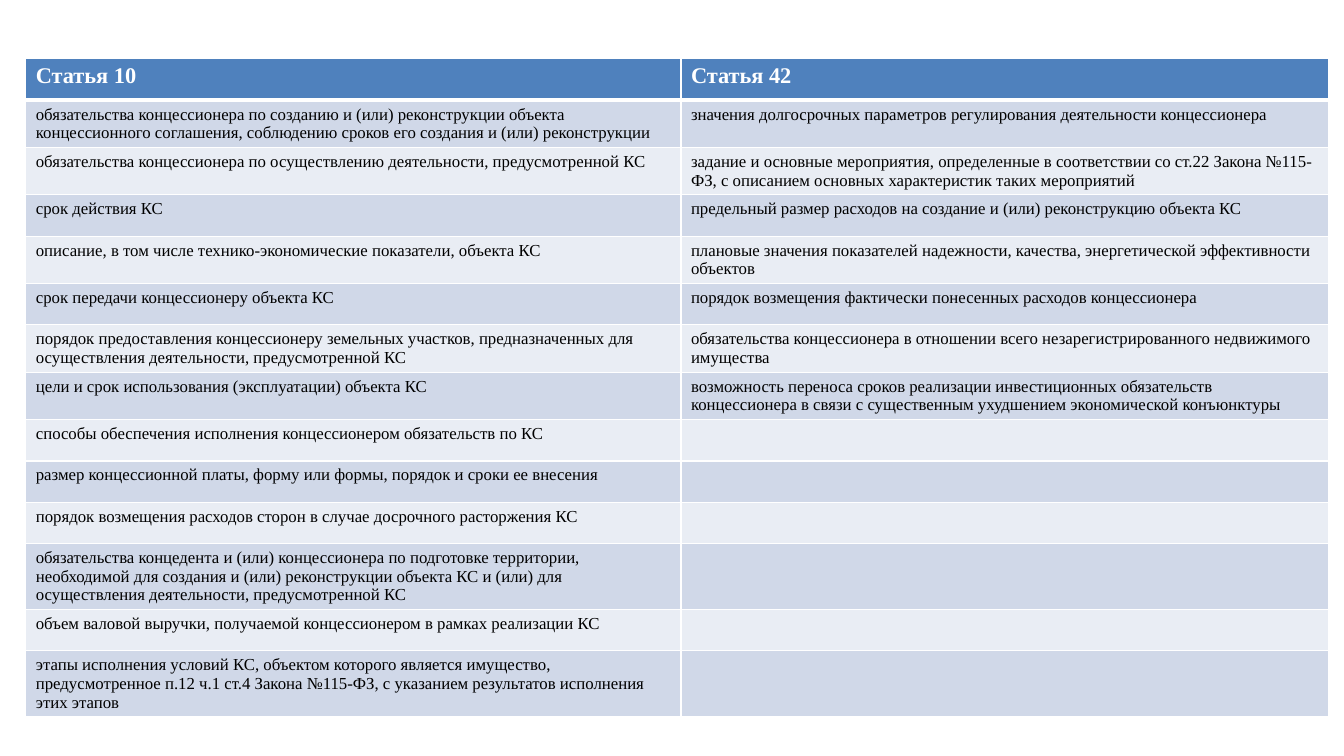
from itertools import zip_longest
from lxml import etree
from pptx import Presentation
from pptx import util as u
from pptx.dml.color import RGBColor
from pptx.oxml.ns import qn

FONT = "Times New Roman"
HEAD, DARK, LIGHT, WHITE = "4F81BD", "D0D8E8", "E9EDF4", "FFFFFF"

# Contents of the two columns
left = [
    "Статья 10",
    "обязательства концессионера по созданию и (или) реконструкции объекта концессионного соглашения, соблюдению сроков его создания и (или) реконструкции",
    "обязательства концессионера по осуществлению деятельности, предусмотренной КС",
    "срок действия КС",
    "описание, в том числе технико-экономические показатели, объекта КС",
    "срок передачи концессионеру объекта КС",
    "порядок предоставления концессионеру земельных участков, предназначенных для осуществления деятельности, предусмотренной КС",
    "цели и срок использования (эксплуатации) объекта КС",
    "способы обеспечения исполнения концессионером обязательств по КС",
    "размер концессионной платы, форму или формы, порядок и сроки ее внесения",
    "порядок возмещения расходов сторон в случае досрочного расторжения КС",
    "обязательства концедента и (или) концессионера по подготовке территории, необходимой для создания и (или) реконструкции объекта КС и (или) для осуществления деятельности, предусмотренной КС",
    "объем валовой выручки, получаемой концессионером в рамках реализации КС",
    "этапы исполнения условий КС, объектом которого является имущество, предусмотренное п.12 ч.1 ст.4 Закона №115-ФЗ, с указанием результатов исполнения этих этапов",
]
right = [
    "Статья 42",
    "значения долгосрочных параметров регулирования деятельности концессионера",
    "задание и основные мероприятия, определенные в соответствии со ст.22 Закона №115-ФЗ, с описанием основных характеристик таких мероприятий",
    "предельный размер расходов на создание и (или) реконструкцию объекта КС",
    "плановые значения показателей надежности, качества, энергетической эффективности объектов",
    "порядок возмещения фактически понесенных расходов концессионера",
    "обязательства концессионера в отношении всего незарегистрированного недвижимого имущества",
    "возможность переноса сроков реализации инвестиционных обязательств концессионера в связи с существенным ухудшением экономической конъюнктуры",
]


def write(cell, words, size=12, color="000000", bold=False, fill=WHITE):
    cell.fill.solid()
    cell.fill.fore_color.rgb = RGBColor.from_string(fill)
    cell.text = words
    font = cell.text_frame.paragraphs[0].font
    font.name, font.size, font.bold = FONT, u.Pt(size), bold
    font.color.rgb = RGBColor.from_string(color)


def edge(cell, **widths):
    props = cell._tc.get_or_add_tcPr()
    for spot, (side, width) in enumerate(widths.items()):
        line = etree.Element(qn(f"a:ln{side}"), w=str(u.Pt(width)))
        paint = etree.SubElement(line, qn("a:solidFill"))
        etree.SubElement(paint, qn("a:srgbClr"), val=WHITE)
        props.insert(spot, line)


# Slide
deck = Presentation()
deck.slide_width, deck.slide_height = u.Cm(33.87), u.Cm(19.05)
slide = deck.slides.add_slide(deck.slide_layouts[6])

# Table
tall = u.Cm(1.04)
grid = slide.shapes.add_table(
    len(left), 2, u.Cm(0.65), u.Cm(1.48), u.Cm(32.82), tall * len(left)
).table
grid.columns[0].width, grid.columns[1].width = u.Cm(16.51), u.Cm(16.31)

# Rows: a header, then alternating bands
for row, pair in enumerate(zip_longest(left, right, fillvalue="")):
    grid.rows[row].height = tall
    for col, words in enumerate(pair):
        cell = grid.cell(row, col)
        if row == 0:
            write(cell, words, size=16, color=WHITE, bold=True, fill=HEAD)
        else:
            write(cell, words, fill=DARK if row % 2 else LIGHT)
        edge(cell, L=1, R=1, T=3 if row == 1 else 1, B=3 if row == 0 else 1)

deck.save("out.pptx")
